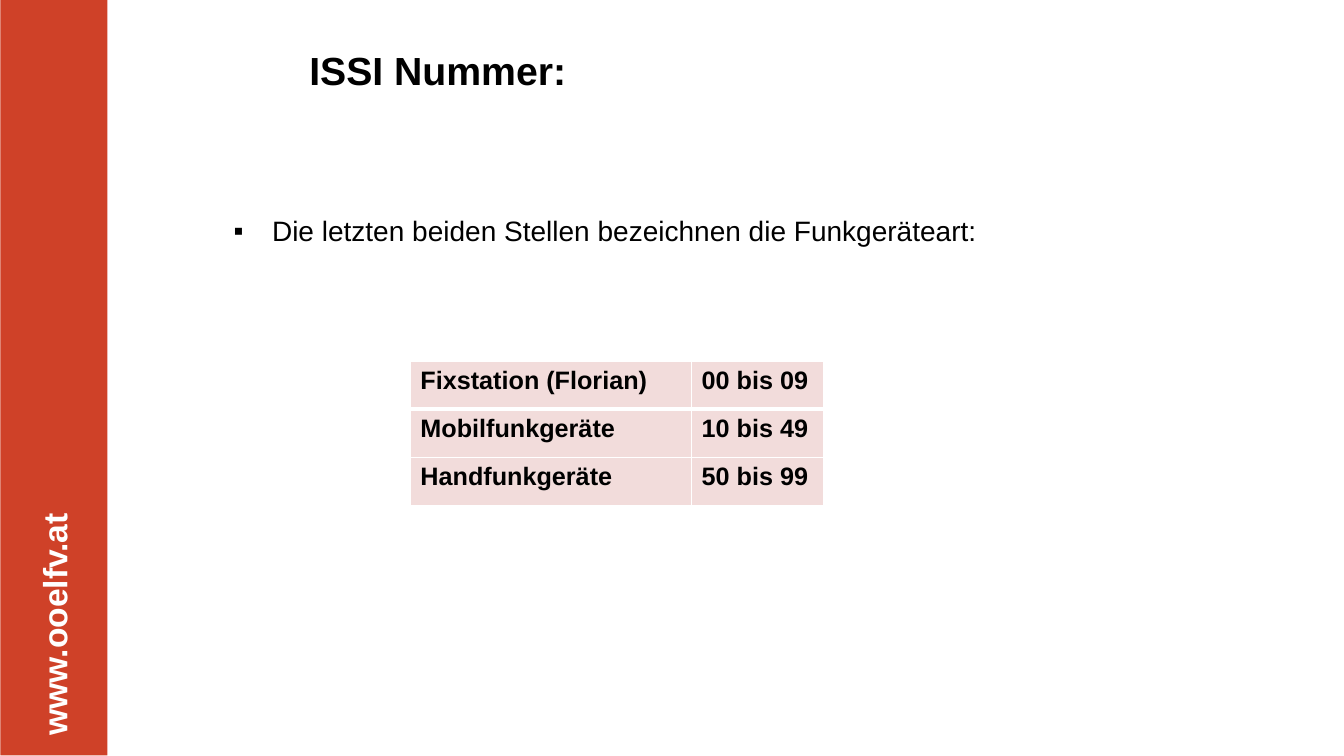
from dataclasses import dataclass

from lxml.etree import SubElement as Sub
from pptx import Presentation
from pptx.dml.color import RGBColor as Rgb
from pptx.enum.shapes import MSO_SHAPE as Form
from pptx.enum.text import MSO_ANCHOR as Anchor, MSO_AUTO_SIZE as Auto, PP_ALIGN as Align
from pptx.oxml import parse_xml
from pptx.oxml.ns import nsdecls, qn
from pptx.util import Pt

SCALE = 9144


def px(num):
    return int(num * SCALE)


@dataclass(frozen=True)
class Theme:
    font: str = "Arial"
    red: str = "CF4128"
    rose: str = "F2DCDB"
    white: str = "FFFFFF"
    black: str = "000000"
    title: int = 28
    side: int = 24
    body: int = 20
    cell: int = 18
    thin: int = 1
    thick: int = 3


class Page:
    def __init__(self, slide, theme):
        self.slide = slide
        self.theme = theme

    def label(self, frame, text, size, color, bold=True):
        para = frame.paragraphs[0]
        para.alignment = Align.LEFT
        run = para.add_run()
        run.text = text
        style = {"name": self.theme.font, "size": Pt(size), "bold": bold}
        for key, value in style.items():
            setattr(run.font, key, value)
        run.font.color.rgb = Rgb.from_string(color)

    def bar(self, box, text):
        shape = self.slide.shapes.add_shape(Form.RECTANGLE, *map(px, box))
        shape.rotation = 270
        shape.shadow.inherit = False
        shape.fill.solid()
        shape.fill.fore_color.rgb = Rgb.from_string(self.theme.red)
        shape.line.fill.background()
        frame = shape.text_frame
        style = {"margin_left": px(20), "vertical_anchor": Anchor.MIDDLE}
        for key, value in style.items():
            setattr(frame, key, value)
        self.label(frame, text, self.theme.side, self.theme.white)

    def text(self, box, text, size, bold=True, mark=None):
        frame = self.slide.shapes.add_textbox(*map(px, box)).text_frame
        style = {"word_wrap": False, "auto_size": Auto.SHAPE_TO_FIT_TEXT}
        for key, value in style.items():
            setattr(frame, key, value)
        if mark:
            props = frame.paragraphs[0]._p.get_or_add_pPr()
            props.set("marL", str(px(38)))
            props.set("indent", str(px(-38)))
            Sub(props, qn("a:buFont"), typeface=self.theme.font)
            Sub(props, qn("a:buChar"), char=mark)
        self.label(frame, text, size, self.theme.black, bold)

    def edge(self, cell, sides):
        props = cell._tc.get_or_add_tcPr()
        for spot, (side, width) in enumerate(sides.items()):
            props.insert(spot, parse_xml(
                f'<a:ln{side} {nsdecls("a")} w="{Pt(width)}"><a:solidFill>'
                f'<a:srgbClr val="{self.theme.white}"/></a:solidFill></a:ln{side}>'))

    def table(self, left, top, cols, rows, data):
        box = map(px, (left, top, sum(cols), sum(rows)))
        grid = self.slide.shapes.add_table(len(rows), len(cols), *box).table
        for col, width in zip(grid.columns, cols):
            col.width = px(width)
        thin, thick = self.theme.thin, self.theme.thick
        for r, (row, height) in enumerate(zip(grid.rows, rows)):
            row.height = px(height)
            for cell, text in zip(row.cells, data[r]):
                cell.fill.solid()
                cell.fill.fore_color.rgb = Rgb.from_string(self.theme.rose)
                self.label(cell.text_frame, text, self.theme.cell, self.theme.black)
                self.edge(cell, {
                    "L": thin, "R": thin,
                    "T": thick if r == 1 else thin,
                    "B": thick if r == 0 else thin,
                })


def main():
    deck = Presentation()
    deck.slide_width, deck.slide_height = px(1333), px(750)
    theme = Theme()
    page = Page(deck.slides.add_slide(deck.slide_layouts[6]), theme)
    page.bar((-322, 321, 751, 106), "www.ooelfv.at")
    page.text((222, 207, 780, 44),
              "Die letzten beiden Stellen bezeichnen die Funkgeräteart:",
              theme.body, bold=False, mark="▪")
    page.text((297, 41, 288, 57), "ISSI Nummer:", theme.title)
    page.table(407, 359, (279, 131), (47, 48, 48), (
        ("Fixstation (Florian)", "00 bis 09"),
        ("Mobilfunkgeräte", "10 bis 49"),
        ("Handfunkgeräte", "50 bis 99"),
    ))
    deck.save("out.pptx")


if __name__ == "__main__":
    main()
